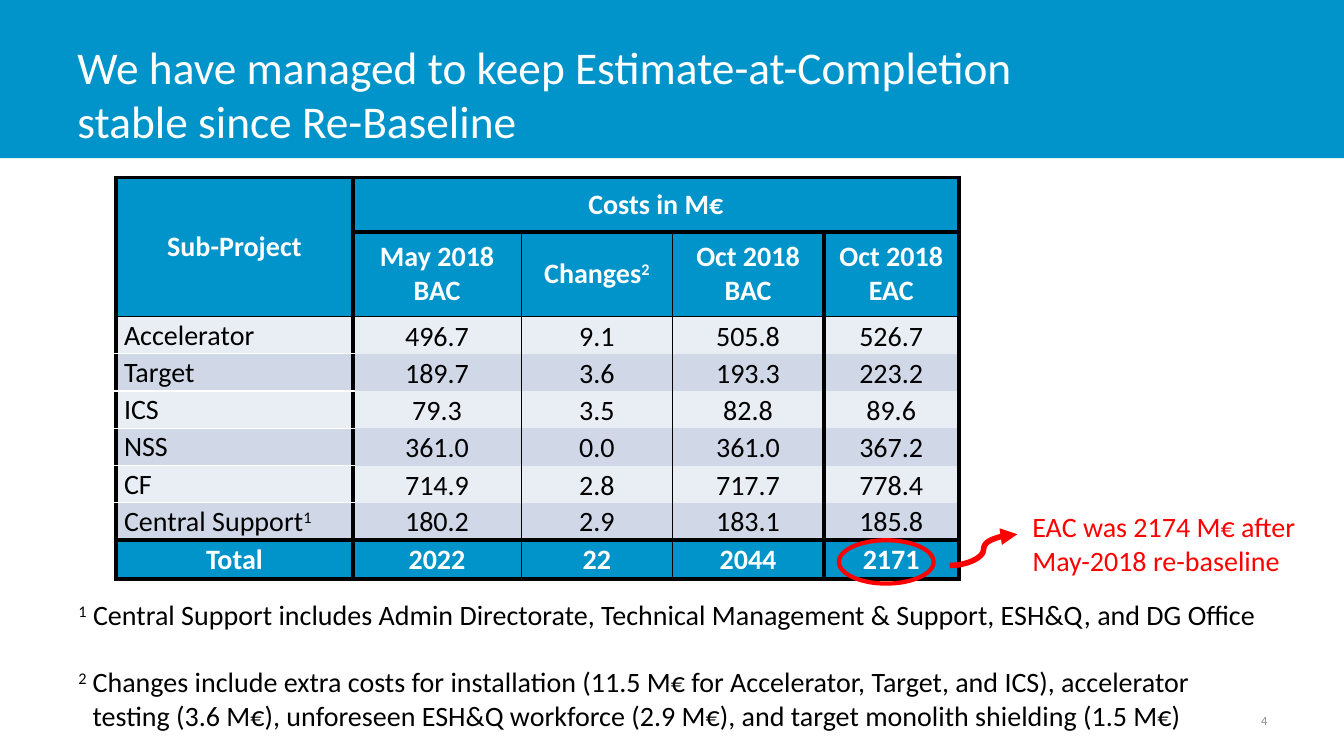
from lxml import etree
from pptx import Presentation
from pptx.dml.color import RGBColor
from pptx.enum.shapes import MSO_CONNECTOR, MSO_SHAPE
from pptx.enum.text import MSO_ANCHOR, PP_ALIGN
from pptx.oxml.ns import qn
from pptx.util import Inches, Pt

BLUE = RGBColor(0x00, 0x94, 0xCA)
WHITE = RGBColor(0xFF, 0xFF, 0xFF)
BLACK = RGBColor(0x00, 0x00, 0x00)
RED = RGBColor(0xFF, 0x00, 0x00)
GREY = RGBColor(0x8C, 0x8C, 0x8C)
LIGHT_BAND = RGBColor(0xE9, 0xED, 0xF4)
DARK_BAND = RGBColor(0xD0, 0xD8, 0xE8)

LEFT, CENTER, RIGHT = PP_ALIGN.LEFT, PP_ALIGN.CENTER, PP_ALIGN.RIGHT
TOP, MIDDLE, BOTTOM = MSO_ANCHOR.TOP, MSO_ANCHOR.MIDDLE, MSO_ANCHOR.BOTTOM
RECTANGLE, OVAL = MSO_SHAPE.RECTANGLE, MSO_SHAPE.OVAL
CURVE = MSO_CONNECTOR.CURVE

COLUMN_WIDTHS = [2.35, 1.67, 1.5, 1.5, 1.34]
ROW_HEIGHTS = [0.54, 0.84] + [0.37] * 6 + [0.39]
COLUMN_EDGES = [3, 3, 1, 1, 3, 3]  # vertical border widths, left to right
HEADERS = ["May 2018 BAC", "Changes^2", "Oct 2018 BAC", "Oct 2018 EAC"]
COSTS = [
    ["Accelerator", "496.7", "9.1", "505.8", "526.7"],
    ["Target", "189.7", "3.6", "193.3", "223.2"],
    ["ICS", "79.3", "3.5", "82.8", "89.6"],
    ["NSS", "361.0", "0.0", "361.0", "367.2"],
    ["CF", "714.9", "2.8", "717.7", "778.4"],
    ["Central Support^1", "180.2", "2.9", "183.1", "185.8"],
]
TOTALS = ["Total", "2022", "22", "2044", "2171"]
FIRST_COST_ROW = 2
TOTAL_ROW = FIRST_COST_ROW + len(COSTS)


class SlideBuilder:
    font_name = "Calibri"

    def __init__(self, slide):
        self.slide = slide

    def runs(self, paragraph, text, size, color, bold=False):
        """Add runs; a ^ marks the next character as superscript."""
        pieces = text.split("^")
        parts = [(pieces[0], False)]
        for piece in pieces[1:]:
            parts += [(piece[0], True), (piece[1:], False)]
        for part, raised in parts:
            if not part:
                continue
            run = paragraph.add_run()
            run.text = part
            run.font.name = self.font_name
            run.font.size = Pt(size)
            run.font.bold = bold
            run.font.color.rgb = color
            if raised:
                run.font._element.set("baseline", "30000")

    def indent(self, paragraph, left, first=0):
        properties = paragraph._p.get_or_add_pPr()
        properties.set("marL", str(Inches(left)))
        properties.set("indent", str(Inches(first)))

    def text(self, box, paragraphs, size, color, align=LEFT, anchor=TOP, gap=0):
        """Add a text box and return its paragraphs."""
        frame = self.slide.shapes.add_textbox(*map(Inches, box)).text_frame
        frame.word_wrap = True
        frame.vertical_anchor = anchor
        for index, content in enumerate(paragraphs):
            paragraph = frame.add_paragraph() if index else frame.paragraphs[0]
            paragraph.alignment = align
            if index:
                paragraph.space_before = Pt(gap)
            self.runs(paragraph, content, size, color)
        return frame.paragraphs

    def shape(self, kind, box, fill=None, line=None, width=0):
        shape = self.slide.shapes.add_shape(kind, *map(Inches, box))
        shape.shadow.inherit = False
        if fill is None:
            shape.fill.background()
        else:
            shape.fill.solid()
            shape.fill.fore_color.rgb = fill
        if line is None:
            shape.line.fill.background()
        else:
            shape.line.color.rgb = line
            shape.line.width = Pt(width)

    def curved_arrow(self, start, end, color, width):
        connector = self.slide.shapes.add_connector(CURVE, *map(Inches, start + end))
        connector.line.color.rgb = color
        connector.line.width = Pt(width)
        properties = connector._element.spPr
        etree.SubElement(properties.find(qn("a:ln")), qn("a:tailEnd"), type="triangle")
        etree.SubElement(properties, qn("a:effectLst"))

    def table(self, left, top, widths, heights):
        frame = self.slide.shapes.add_table(
            len(heights), len(widths), Inches(left), Inches(top),
            Inches(sum(widths)), Inches(sum(heights)))
        table = frame.table
        table.first_row = table.horz_banding = False
        for column, width in zip(table.columns, widths):
            column.width = Inches(width)
        for row, height in zip(table.rows, heights):
            row.height = Inches(height)
        return table

    def border(self, cell, side, color, width):
        line = etree.SubElement(cell._tc.get_or_add_tcPr(), qn("a:ln" + side), w=str(Pt(width)))
        if not width:
            etree.SubElement(line, qn("a:noFill"))
            return
        fill = etree.SubElement(line, qn("a:solidFill"))
        etree.SubElement(fill, qn("a:srgbClr"), val=str(color))

    def cell(self, cell, text, fill, color, borders, bold=False, align=CENTER, anchor=MIDDLE):
        for side, (line_color, width) in zip("LRTB", borders):
            self.border(cell, side, line_color, width)
        cell.fill.solid()
        cell.fill.fore_color.rgb = fill
        cell.vertical_anchor = anchor
        paragraph = cell.text_frame.paragraphs[0]
        paragraph.alignment = align
        self.runs(paragraph, text, 20, color, bold)
        return paragraph


def row_edge(edge, column):
    """Colour and width of the horizontal border above the given row."""
    if edge == FIRST_COST_ROW:
        return BLACK, 1
    if FIRST_COST_ROW < edge < TOTAL_ROW:
        return WHITE, 0 if column else 1
    return BLACK, 3


def cell_borders(row, column, row_span=1, column_span=1):
    return [(BLACK, COLUMN_EDGES[column]), (BLACK, COLUMN_EDGES[column + column_span]),
            row_edge(row, column), row_edge(row + row_span, column)]


def add_cost_table(builder):
    table = builder.table(1.15, 1.76, COLUMN_WIDTHS, ROW_HEIGHTS)
    table.cell(0, 0).merge(table.cell(1, 0))
    table.cell(0, 1).merge(table.cell(0, 4))
    headings = [(0, 0, 2, 1, "Sub-Project"), (0, 1, 1, 4, "Costs in M€")]
    headings += [(1, column, 1, 1, text) for column, text in enumerate(HEADERS, 1)]
    for row, column, row_span, column_span, text in headings:
        builder.cell(table.cell(row, column), text, BLUE, WHITE,
                     cell_borders(row, column, row_span, column_span), bold=True)

    for row, values in enumerate(COSTS + [TOTALS], FIRST_COST_ROW):
        is_total = row == TOTAL_ROW
        fill = BLUE if is_total else DARK_BAND if row % 2 else LIGHT_BAND
        for column, text in enumerate(values):
            is_label = column == 0 and not is_total
            cell = table.cell(row, column)
            cell.margin_left = cell.margin_right = cell.margin_top = Inches(0.01)
            cell.margin_bottom = 0
            paragraph = builder.cell(
                cell, text, fill, WHITE if is_total else BLACK, cell_borders(row, column),
                bold=is_total, align=LEFT if is_label else CENTER,
                anchor=BOTTOM if column and row < TOTAL_ROW - 1 else MIDDLE)
            if is_label:
                builder.indent(paragraph, 0.07)


def main():
    presentation = Presentation()
    presentation.slide_width = Inches(13.33)
    presentation.slide_height = Inches(7.5)
    builder = SlideBuilder(presentation.slides.add_slide(presentation.slide_layouts[6]))

    builder.shape(RECTANGLE, (0, 0, 13.33, 1.57), fill=BLUE)
    builder.text((0.67, 0.3, 10.41, 1.25),
                 ["We have managed to keep Estimate-at-Completion stable since Re-Baseline"],
                 32.4, WHITE, anchor=MIDDLE)
    builder.text((9.56, 6.95, 3.11, 0.4), ["4"], 9, GREY, align=RIGHT, anchor=MIDDLE)
    add_cost_table(builder)

    footnotes = builder.text((0.68, 5.88, 11.99, 1.45), [
        "^1 Central Support includes Admin Directorate, Technical Management & Support, "
        "ESH&Q, and DG Office",
        "^2\tChanges include extra costs for installation (11.5 M€ for Accelerator, Target, "
        "and ICS), accelerator testing (3.6 M€), unforeseen ESH&Q workforce (2.9 M€), "
        "and target monolith shielding (1.5 M€)",
    ], 20, BLACK, gap=24)
    builder.indent(footnotes[1], 0.14, -0.14)

    builder.text((10.14, 5.01, 2.85, 1.04), ["EAC was 2174 M€ after May-2018 re-baseline"], 20, RED)
    builder.shape(OVAL, (8.32, 5.36, 0.94, 0.43), line=RED, width=3)
    builder.curved_arrow((9.42, 5.61), (10.09, 5.3), RED, 4)
    presentation.save("out.pptx")


if __name__ == "__main__":
    main()
